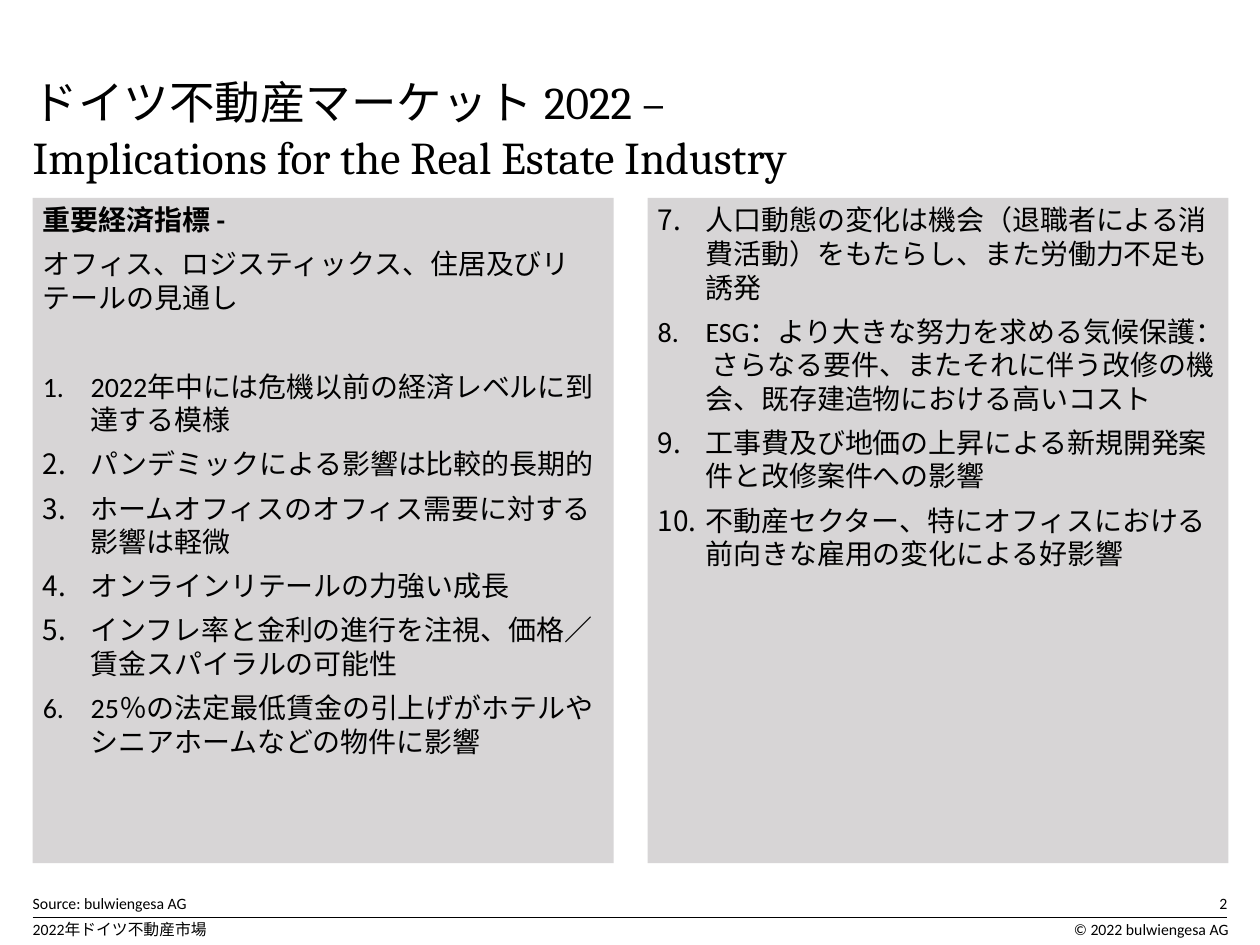
from lxml import etree
from pptx import Presentation, util as u
from pptx.dml.color import RGBColor
from pptx.enum import shapes, text
from pptx.oxml.ns import qn

HUES = {"ink": "000000", "panel": "D7D5D6"}
TITLE = "ドイツ不動産マーケット 2022 –\vImplications for the Real Estate Industry"
INTRO = ["重要経済指標 -", "オフィス、ロジスティックス、住居及びリテールの見通し"]
POINTS = [
    "2022年中には危機以前の経済レベルに到達する模様",
    "パンデミックによる影響は比較的長期的",
    "ホームオフィスのオフィス需要に対する影響は軽微",
    "オンラインリテールの力強い成長",
    "インフレ率と金利の進行を注視、価格／賃金スパイラルの可能性",
    "25％の法定最低賃金の引上げがホテルやシニアホームなどの物件に影響",
    "人口動態の変化は機会（退職者による消費活動）をもたらし、また労働力不足も誘発",
    "ESG：より大きな努力を求める気候保護： さらなる要件、またそれに伴う改修の機会、既存建造物における高いコスト",
    "工事費及び地価の上昇による新規開発案件と改修案件への影響",
    "不動産セクター、特にオフィスにおける前向きな雇用の変化による好影響",
]
SPLIT = 6
LEFT, RIGHT = 0.26, 9.74
WIDE, TALL, TOP = 4.61, 5.28, 1.57
GAP, LEAD, INDENT = 6, 31.5, 0.38
SMALL = {"name": "Calibri", "size": u.Pt(9)}
BODY = {"name": "Calibri", "size": u.Pt(16)}
HEAD = {"name": "Cambria", "size": u.Pt(26)}
START, END = text.PP_ALIGN.LEFT, text.PP_ALIGN.RIGHT
NOTES = [
    ("Source: bulwiengesa AG", LEFT, 7.09, 7.48, START),
    ("2", 9.15, 7.09, 0.59, END),
    ("2022年ドイツ不動産市場", LEFT, 7.3, 6.69, START),
    ("© 2022 bulwiengesa AG", 7.19, 7.3, 2.56, END),
]


def hue(name):
    return RGBColor.from_string(HUES[name])


def style(obj, form):
    for key, val in form.items():
        setattr(obj, key, val)


def frame(shape, pad=(0, 0, 0, 0)):
    box = shape.text_frame
    sides = ("left", "top", "right", "bottom")
    style(box, {f"margin_{s}": u.Inches(v) for s, v in zip(sides, pad)})
    style(box, {"word_wrap": True, "vertical_anchor": text.MSO_ANCHOR.TOP})
    return box


def write(para, words, form, align=START):
    para.text = words
    para.alignment = align
    style(para.font, form)
    para.font.color.rgb = hue("ink")


def label(slide, words, area, form, align=START):
    box = slide.shapes.add_textbox(*map(u.Inches, area))
    write(frame(box).paragraphs[0], words, form, align)


def number(para, start):
    props = para._p.get_or_add_pPr()
    props.set("marL", str(u.Inches(INDENT)))
    props.set("indent", str(-u.Inches(INDENT)))
    mark = etree.SubElement(props, qn("a:buAutoNum"), type="arabicPeriod")
    mark.set("startAt", str(start))


def panel(slide, left, intro, points, start):
    area = map(u.Inches, (left, TOP, WIDE, TALL))
    rect = slide.shapes.add_shape(shapes.MSO_SHAPE.RECTANGLE, *area)
    rect.shadow.inherit = False
    rect.fill.solid()
    rect.fill.fore_color.rgb = hue("panel")
    rect.line.fill.background()
    box = frame(rect, (0.08, 0.04, 0.04, 0.04))
    for i, words in enumerate(intro + points):
        para = box.paragraphs[0] if i == 0 else box.add_paragraph()
        if i:
            para.space_before = u.Pt(LEAD if i == len(intro) else GAP)
        if i >= len(intro):
            number(para, start)
        write(para, words, {**BODY, "bold": i == 0 and bool(intro)})


def rule(slide, y):
    ends = map(u.Inches, (LEFT, y, RIGHT, y))
    line = slide.shapes.add_connector(shapes.MSO_CONNECTOR.STRAIGHT, *ends)
    line.line.color.rgb = hue("ink")
    line.line.width = u.Pt(0.4)
    etree.SubElement(line._element.spPr, qn("a:effectLst"))


def main():
    deck = Presentation()
    deck.slide_width, deck.slide_height = u.Inches(10), u.Inches(7.5)
    slide = deck.slides.add_slide(deck.slide_layouts[6])
    rule(slide, 7.28)
    label(slide, TITLE, (LEFT, 0.59, 9.49, 0.88), HEAD)
    panel(slide, LEFT, INTRO, POINTS[:SPLIT], 1)
    panel(slide, 5.14, [], POINTS[SPLIT:], SPLIT + 1)
    for words, x, y, wide, align in NOTES:
        label(slide, words, (x, y, wide, 0.15), SMALL, align)
    deck.save("out.pptx")


if __name__ == "__main__":
    main()
